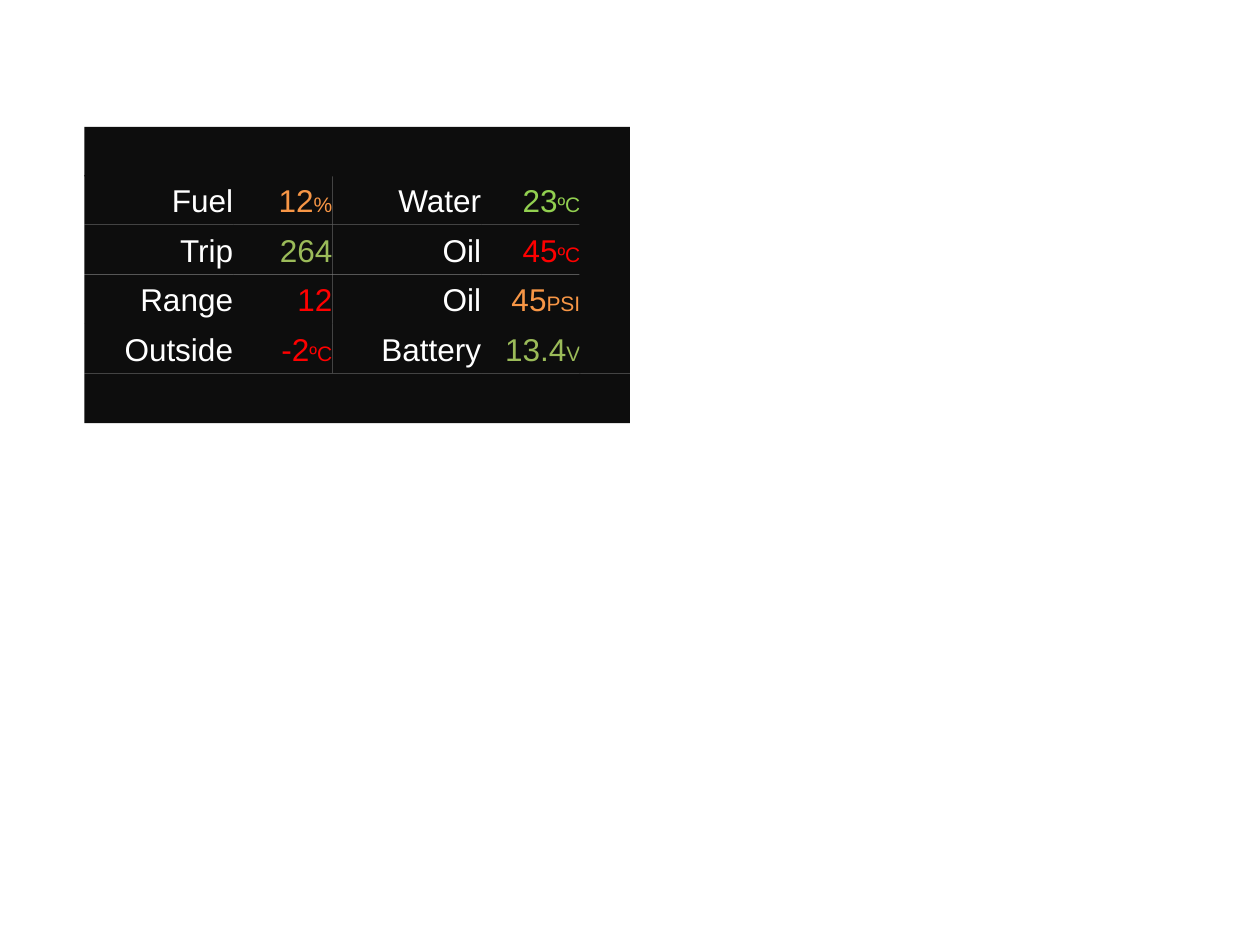
from pptx import Presentation
from pptx.dml.color import RGBColor
from pptx.enum.shapes import MSO_SHAPE
from pptx.enum.text import MSO_ANCHOR, PP_ALIGN
from pptx.util import Emu, Pt

SCALE = 3600
COLORS = {
    "panel": "0D0D0D",
    "label": "FFFFFF",
    "warning": "F79646",
    "normal": "9BBB59",
    "good": "92D050",
    "alert": "FF0000",
}
LEFT, TOP, ROW = 170, 353, 100
LABEL_WIDTH, VALUE_WIDTH = 300, 200
PANEL_WIDTH = 1100
STRIP_WIDTH = 102

GAUGES = [
    [
        ("Fuel", "12", "%", "warning"),
        ("Trip", "264", "", "normal"),
        ("Range", "12", "", "alert"),
        ("Outside", "-2", "ºC", "alert"),
    ],
    [
        ("Water", "23", "ºC", "good"),
        ("Oil", "45", "ºC", "alert"),
        ("Oil", "45", "PSI", "warning"),
        ("Battery", "13.4", "V", "normal"),
    ],
]

presentation = Presentation()
presentation.slide_width = Emu(2540 * SCALE)
presentation.slide_height = Emu(1905 * SCALE)
slide = presentation.slides.add_slide(presentation.slide_layouts[6])


def add_panel(left, top, width, height):
    shape = slide.shapes.add_shape(
        MSO_SHAPE.RECTANGLE, *(Emu(px * SCALE) for px in (left, top, width, height))
    )
    shape.shadow.inherit = False
    shape.fill.solid()
    shape.fill.fore_color.rgb = RGBColor.from_string(COLORS["panel"])
    shape.line.fill.background()
    return shape


def add_cell(left, top, width, runs, color):
    frame = add_panel(left, top, width, ROW).text_frame
    frame.margin_left = frame.margin_right = 0
    frame.margin_top = frame.margin_bottom = 0
    frame.word_wrap = False
    frame.vertical_anchor = MSO_ANCHOR.MIDDLE
    paragraph = frame.paragraphs[0]
    paragraph.alignment = PP_ALIGN.RIGHT
    for text, size in runs:
        if text:
            run = paragraph.add_run()
            run.text = text
            run.font.name = "Arial"
            run.font.size = Pt(size)
            run.font.color.rgb = RGBColor.from_string(COLORS[color])


for column, gauges in enumerate(GAUGES):
    label_left = LEFT + column * (LABEL_WIDTH + VALUE_WIDTH)
    for row, (label, value, unit, color) in enumerate(gauges):
        top = TOP + row * ROW
        add_cell(label_left, top, LABEL_WIDTH, [(label, 18)], "label")
        add_cell(label_left + LABEL_WIDTH, top, VALUE_WIDTH, [(value, 18), (unit, 12)], color)

add_panel(LEFT + PANEL_WIDTH - STRIP_WIDTH, TOP, STRIP_WIDTH, 4 * ROW)
for top in (TOP - ROW + 3, TOP + 4 * ROW):
    add_panel(LEFT, top, PANEL_WIDTH, ROW)

presentation.save("out.pptx")
